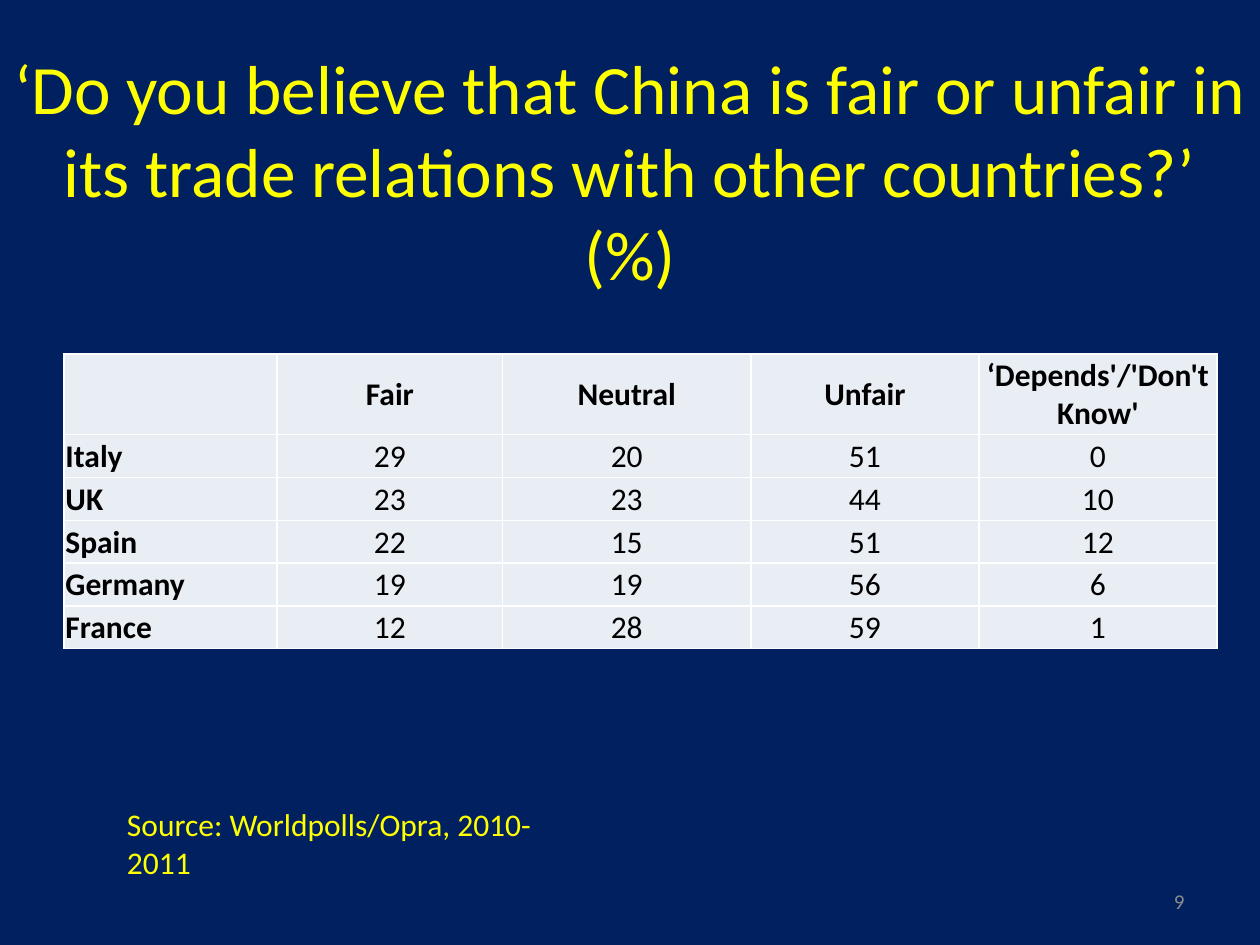
from lxml.etree import SubElement
from pptx import Presentation
from pptx.dml.color import RGBColor
from pptx.enum.text import MSO_ANCHOR as Anchor, MSO_AUTO_SIZE as AutoSize, PP_ALIGN as Align
from pptx.oxml.ns import qn
from pptx.util import Inches, Pt

NAVY = RGBColor(0x00, 0x20, 0x60)
YELLOW = RGBColor(0xFF, 0xFF, 0x00)
PALE = RGBColor(0xE9, 0xED, 0xF4)
WHITE = RGBColor(0xFF, 0xFF, 0xFF)
BLACK = RGBColor(0x00, 0x00, 0x00)
GREY = RGBColor(0x8C, 0x8C, 0x8C)
FONT = "Calibri"

ANSWERS = ["", "Fair", "Neutral", "Unfair", "‘Depends'/'Don't Know'"]
COUNTRIES = [
    ("Italy", 29, 20, 51, 0),
    ("UK", 23, 23, 44, 10),
    ("Spain", 22, 15, 51, 12),
    ("Germany", 19, 19, 56, 6),
    ("France", 12, 28, 59, 1),
]
COLUMN_WIDTHS = [1.69, 1.79, 1.97, 1.81, 1.89]
HEADER_HEIGHT, ROW_HEIGHT = 0.64, 0.34


def write(frame, words, size, color, align=Align.LEFT, bold=False):
    frame.text = words
    for paragraph in frame.paragraphs:
        paragraph.alignment = align
        paragraph.font.size = Pt(size)
        for run in paragraph.runs:
            run.font.name = FONT
            run.font.size = Pt(size)
            run.font.bold = bold
            run.font.color.rgb = color


def place_question(slide, left, top, width, height):
    question = slide.shapes.title
    question.left, question.top = Inches(left), Inches(top)
    question.width, question.height = Inches(width), Inches(height)
    frame = question.text_frame
    write(frame, "‘Do you believe that China is fair or unfair in its trade "
          "relations with other countries?’ (%)", 39.6, YELLOW, Align.CENTER)
    frame.vertical_anchor = Anchor.MIDDLE
    frame.word_wrap = True
    frame.auto_size = AutoSize.NONE


def outline_cell(cell):
    properties = cell._tc.get_or_add_tcPr()
    for position, side in enumerate(("lnL", "lnR", "lnT", "lnB")):
        border = SubElement(properties, qn(f"a:{side}"), w=str(Pt(1)))
        fill = SubElement(border, qn("a:solidFill"))
        SubElement(fill, qn("a:srgbClr"), val=str(WHITE))
        properties.insert(position, border)


def fill_cell(cell, words, align, bold):
    cell.fill.solid()
    cell.fill.fore_color.rgb = PALE
    outline_cell(cell)
    cell.vertical_anchor = Anchor.MIDDLE
    cell.margin_left = cell.margin_right = cell.margin_top = Inches(0.01)
    cell.margin_bottom = 0
    write(cell.text_frame, words, 18, BLACK, align, bold)


def place_results(slide, left, top, width, height):
    rows = [ANSWERS, *COUNTRIES]
    results = slide.shapes.add_table(
        len(rows), len(ANSWERS), Inches(left), Inches(top), Inches(width), Inches(height)
    ).table
    results.horz_banding = False
    for column, column_width in zip(results.columns, COLUMN_WIDTHS):
        column.width = Inches(column_width)
    for r, row in enumerate(rows):
        results.rows[r].height = Inches(ROW_HEIGHT if r else HEADER_HEIGHT)
        for c, value in enumerate(row):
            align = Align.CENTER if c else Align.LEFT
            fill_cell(results.cell(r, c), str(value), align, bold=r == 0 or c == 0)


def place_note(slide, left, top, width, height, words, size, color,
               align=Align.LEFT, anchor=Anchor.TOP):
    note = slide.shapes.add_textbox(Inches(left), Inches(top), Inches(width), Inches(height))
    frame = note.text_frame
    frame.word_wrap = True
    frame.vertical_anchor = anchor
    write(frame, words, size, color, align)


def main():
    deck = Presentation()
    deck.slide_width, deck.slide_height = Inches(10), Inches(7.5)
    slide = deck.slides.add_slide(deck.slide_layouts[5])
    slide.background.fill.solid()
    slide.background.fill.fore_color.rgb = NAVY

    place_question(slide, 0, 0.52, 10, 1.65)
    place_results(slide, 0.51, 2.81, sum(COLUMN_WIDTHS),
                  HEADER_HEIGHT + ROW_HEIGHT * len(COUNTRIES))
    place_note(slide, 0.91, 6.34, 3.86, 0.4, "Source: Worldpolls/Opra, 2010-2011", 18, YELLOW)
    place_note(slide, 7.17, 6.95, 2.33, 0.4, "9", 12, GREY, Align.RIGHT, Anchor.MIDDLE)
    deck.save("out.pptx")


if __name__ == "__main__":
    main()
